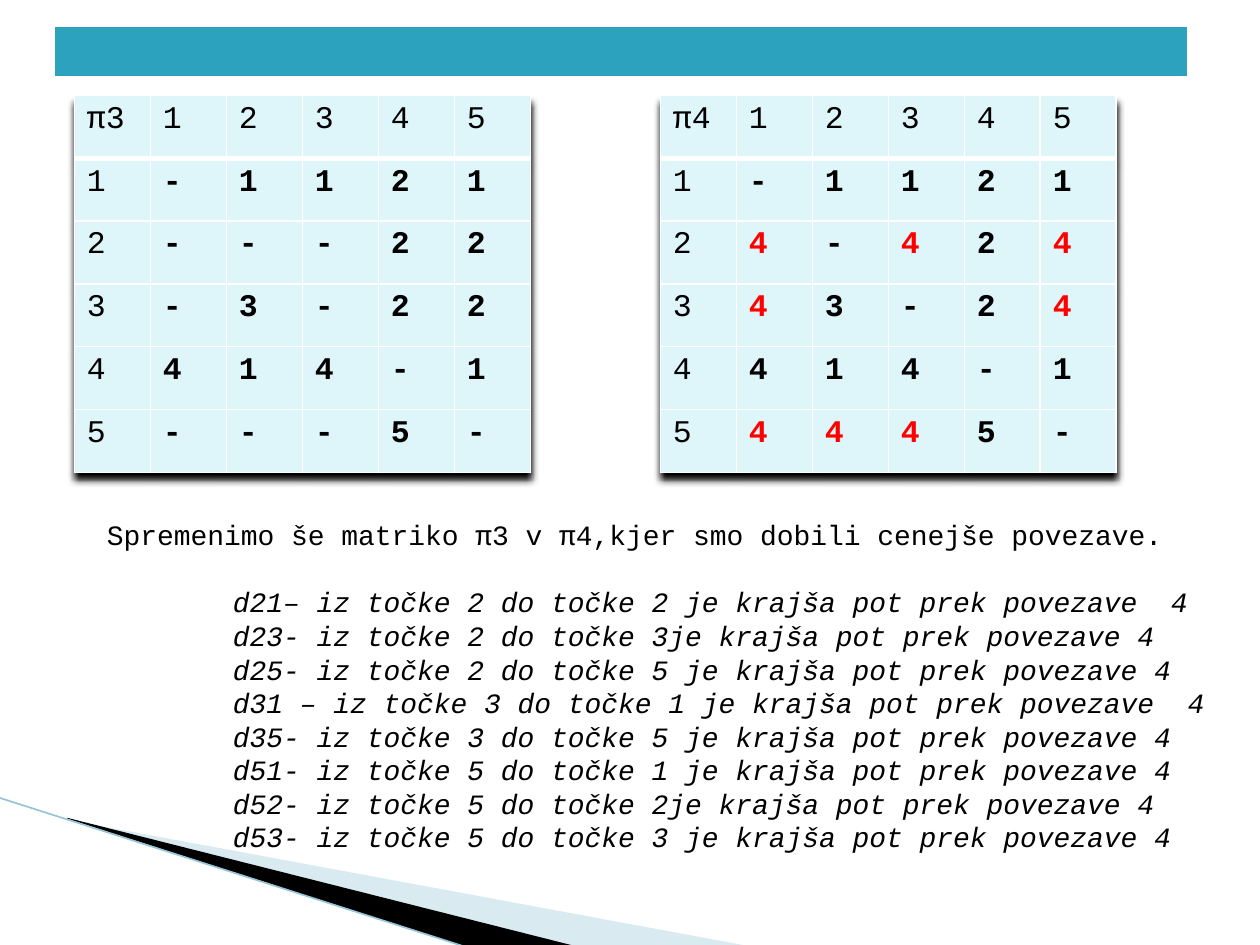
from dataclasses import dataclass
from typing import Optional

from lxml import etree
from pptx import Presentation
from pptx.dml.color import RGBColor
from pptx.enum import shapes, text
from pptx.oxml import parse_xml
from pptx.oxml.ns import nsdecls, qn
from pptx.util import Inches, Pt

FONT = "Courier New"
BLACK = RGBColor(0x00, 0x00, 0x00)
RED = RGBColor(0xFF, 0x00, 0x00)
TEAL = RGBColor(0x2D, 0xA2, 0xBF)
PALE_TEAL = RGBColor(0xDE, 0xF5, 0xFA)
MIST = RGBColor(0xA0, 0xCB, 0xDC)
SKY = RGBColor(0x97, 0xC5, 0xD8)


@dataclass(frozen=True)
class Wedge:
    points: tuple
    color: RGBColor
    alpha: Optional[int] = None


@dataclass(frozen=True)
class Matrix:
    name: str
    left: float
    rows: tuple
    previous: Optional[tuple] = None


WEDGES = (
    Wedge(((0.55, 6.51), (5.95, 7.51), (4.56, 7.51), (0.55, 6.5)), MIST, 40),
    Wedge(((0.53, 6.49), (4.57, 7.51), (3.72, 7.52), (0.54, 6.5)), BLACK),
)
PI3_ROWS = ("-1121", "---22", "-3-22", "414-1", "---5-")
PI4_ROWS = ("-1121", "4-424", "43-24", "414-1", "4445-")
PI3 = Matrix("π3", 0.59, PI3_ROWS)
PI4 = Matrix("π4", 5.24, PI4_ROWS, PI3_ROWS)

INTRO = "Spremenimo še matriko π3 v π4,kjer smo dobili cenejše povezave."
SHORTCUTS = (
    "d21– iz točke 2 do točke 2 je krajša pot prek povezave  4",
    "d23- iz točke 2 do točke 3je krajša pot prek povezave 4",
    "d25- iz točke 2 do točke 5 je krajša pot prek povezave 4",
    "d31 – iz točke 3 do točke 1 je krajša pot prek povezave  4",
    "d35- iz točke 3 do točke 5 je krajša pot prek povezave 4",
    "d51- iz točke 5 do točke 1 je krajša pot prek povezave 4",
    "d52- iz točke 5 do točke 2je krajša pot prek povezave 4",
    "d53- iz točke 5 do točke 3 je krajša pot prek povezave 4",
)
LINE_HEIGHT = Pt(19.2)


def write(paragraph, content: str, *, size: float, color: RGBColor = BLACK,
          bold: bool = False, italic: bool = False) -> None:
    run = paragraph.add_run()
    run.text = content
    run.font.name = FONT
    run.font.size = Pt(size)
    run.font.bold = bold
    run.font.italic = italic
    run.font.color.rgb = color


def draw_wedge(slide, wedge: Wedge) -> None:
    start, *others = [(Inches(x), Inches(y)) for x, y in wedge.points]
    builder = slide.shapes.build_freeform(*start)
    builder.add_line_segments(others, close=True)
    shape = builder.convert_to_shape()
    shape.shadow.inherit = False
    shape.fill.solid()
    shape.fill.fore_color.rgb = wedge.color
    shape.line.fill.background()
    if wedge.alpha is not None:
        color = shape.fill._xPr.find(f".//{qn('a:srgbClr')}")
        etree.SubElement(color, qn("a:alpha")).set("val", str(wedge.alpha * 1000))


def draw_edge(slide) -> None:
    line = slide.shapes.add_connector(
        shapes.MSO_CONNECTOR.STRAIGHT,
        Inches(-0.01), Inches(6.33), Inches(3.71), Inches(7.52))
    line.line.color.rgb = SKY
    line.line.width = Pt(0.95)
    etree.SubElement(line._element.spPr, qn("a:effectLst"))


def format_cell(cell, color: RGBColor, *, top: int = 1, bottom: int = 1) -> None:
    """Give a cell white borders, with widths in points, and a fill."""
    properties = cell._tc.get_or_add_tcPr()
    for side, width in (("L", 1), ("R", 1), ("T", top), ("B", bottom)):
        properties.append(parse_xml(
            f'<a:ln{side} {nsdecls("a")} w="{Pt(width)}"><a:solidFill>'
            f'<a:srgbClr val="FFFFFF"/></a:solidFill></a:ln{side}>'))
    cell.fill.solid()
    cell.fill.fore_color.rgb = color


def add_plain_table(slide, rows: int, columns: int, left: float, top: float,
                    width: float, height: float):
    table = slide.shapes.add_table(
        rows, columns, Inches(left), Inches(top), Inches(width), Inches(height)).table
    table.first_row = False
    table.horz_banding = False
    return table


def draw_banner(slide) -> None:
    cell = add_plain_table(slide, 1, 1, 0.43, 0.21, 9, 0.41).cell(0, 0)
    format_cell(cell, TEAL, bottom=3)
    cell.text_frame.paragraphs[0].font.size = Pt(16)


def add_table_shadow(table) -> None:
    table._tbl.tblPr.insert(0, parse_xml(
        f'<a:effectLst {nsdecls("a")}>'
        f'<a:outerShdw blurRad="{Pt(4)}" dist="{Pt(4)}" dir="5400000" rotWithShape="0">'
        '<a:srgbClr val="000000"/></a:outerShdw></a:effectLst>'))


def draw_matrix(slide, matrix: Matrix) -> None:
    """Draw a matrix with headings; values that differ from the previous one are red."""
    size = len(matrix.rows) + 1
    table = add_plain_table(slide, size, size, matrix.left, 0.76, 3.62, 2.99)
    add_table_shadow(table)
    previous = matrix.previous or matrix.rows
    for row in range(size):
        for column in range(size):
            cell = table.cell(row, column)
            format_cell(cell, PALE_TEAL, top=3 if row == 1 else 1,
                        bottom=3 if row == 0 else 1)
            paragraph = cell.text_frame.paragraphs[0]
            if row and column:
                value = matrix.rows[row - 1][column - 1]
                changed = value != previous[row - 1][column - 1]
                write(paragraph, value, size=18, bold=True,
                      color=RED if changed else BLACK)
            else:
                write(paragraph, str(row + column) if row + column else matrix.name,
                      size=18)


def draw_explanation(slide) -> None:
    box = slide.shapes.add_textbox(Inches(0.75), Inches(4.06), Inches(8.98), Inches(3.67))
    frame = box.text_frame
    frame.word_wrap = True
    frame.auto_size = text.MSO_AUTO_SIZE.NONE
    intro = frame.paragraphs[0]
    intro.line_spacing = LINE_HEIGHT
    intro.space_after = LINE_HEIGHT
    write(intro, INTRO, size=16)
    for shortcut in SHORTCUTS:
        paragraph = frame.add_paragraph()
        paragraph._p.get_or_add_pPr().set("marL", str(Inches(1)))
        paragraph.line_spacing = LINE_HEIGHT
        write(paragraph, shortcut, size=16, italic=True)


def main() -> None:
    presentation = Presentation()
    presentation.slide_width = Inches(10)
    presentation.slide_height = Inches(7.5)
    slide = presentation.slides.add_slide(presentation.slide_layouts[6])
    for wedge in WEDGES:
        draw_wedge(slide, wedge)
    draw_edge(slide)
    draw_banner(slide)
    draw_matrix(slide, PI4)
    draw_explanation(slide)
    draw_matrix(slide, PI3)
    presentation.save("out.pptx")


if __name__ == "__main__":
    main()
